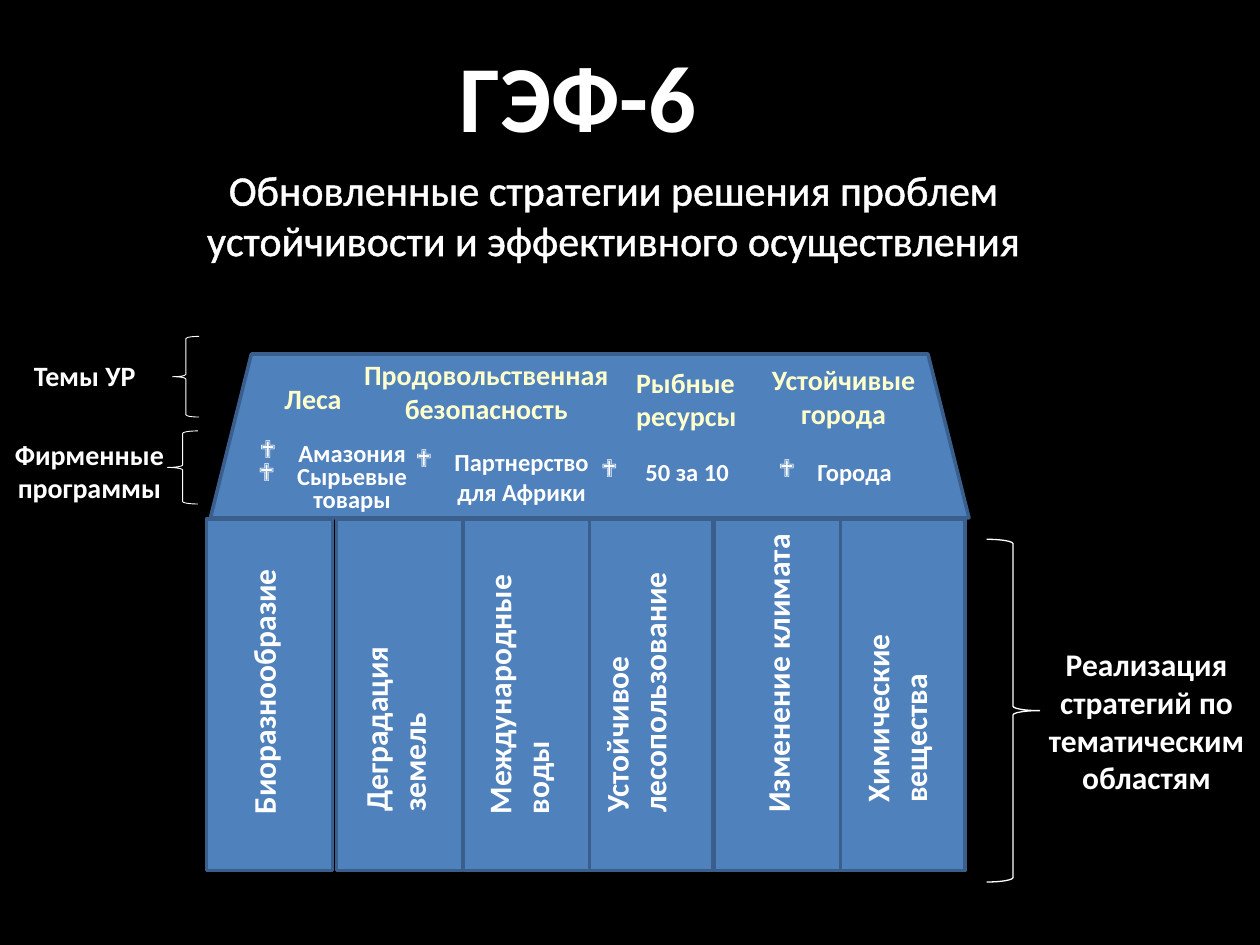
"""Build the slide on the GEF-6 strategy as a house of themes, programmes and focal areas."""
from copy import deepcopy

from lxml import etree
from pptx import Presentation
from pptx.dml.color import RGBColor
from pptx.enum.shapes import MSO_SHAPE
from pptx.enum.text import MSO_ANCHOR, MSO_AUTO_SIZE, PP_ALIGN
from pptx.oxml.ns import qn
from pptx.util import Inches, Pt

RECT, TRAPEZOID = MSO_SHAPE.RECTANGLE, MSO_SHAPE.TRAPEZOID
LEFT_BRACE, RIGHT_BRACE = MSO_SHAPE.LEFT_BRACE, MSO_SHAPE.RIGHT_BRACE
LEFT, CENTER = PP_ALIGN.LEFT, PP_ALIGN.CENTER
TOP, FIT_SHAPE = MSO_ANCHOR.TOP, MSO_AUTO_SIZE.SHAPE_TO_FIT_TEXT

THEME = {
    "font": "Calibri", "back": "000000", "fill": "4F81BD", "edge": "3A5F8C",
    "text": "FFFFFF", "theme": "FFFFCC",
    "title": 54, "subtitle": 24, "pillar": 18, "label": 16, "programme": 14,
}

TITLE = ("ГЭФ-6", (3.54, 0.25, 2.1, 1.01))
SUBTITLE = ("Обновленные стратегии решения проблем устойчивости и эффективного осуществления",
            (0.83, 1.25, 8.08, 0.91))
ROOF = (1.67, 2.81, 6.02, 1.3)
PILLAR_TOP, PILLAR_BOTTOM, PILLAR_WIDTH = 4.12, 6.91, 1
PILLARS = [
    (1.64, ["Биоразнообразие"], (1.89, 4.5, 0.5, 2.06)),
    (2.67, ["Деградация\nземель"], (2.78, 5.12, 0.81, 1.42)),
    (3.68, ["Международные\nводы"], (3.76, 4.55, 0.81, 2.01)),
    (4.66, ["Устойчивое\nлесопользование"], (4.69, 4.53, 0.81, 2.02)),
    (5.67, ["Изменение климата"], (5.97, 4.22, 0.5, 2.33)),
    (6.66, ["Химические", "вещества"], (6.76, 5.02, 0.81, 1.45)),
]
THEMES = [
    (["Леса"], (2.16, 2.98, 0.66, 0.37), LEFT),
    (["Продовольственная\nбезопасность"], (2.78, 2.79, 2.16, 0.64), CENTER),
    (["Рыбные", "ресурсы"], (4.95, 2.85, 1.01, 0.64), LEFT),
    (["Устойчивые\nгорода"], (6.02, 2.83, 1.35, 0.64), CENTER),
]
PROGRAMMES = [
    (["Амазония", "Сырьевые\nтовары"], (1.94, 3.43, 1.4, 0.71), CENTER),
    (["Партнерство\nдля Африки"], (3.19, 3.5, 1.59, 0.57), CENTER),
    ([" 50 за 10"], (4.67, 3.58, 1.23, 0.34), LEFT),
    (["Города"], (6.08, 3.58, 1.1, 0.34), LEFT),
]
SIDE_LABELS = [
    (["Темы УР"], (0.17, 2.8, 1.02, 0.37), LEFT, "label"),
    (["Фирменные\nпрограммы"], (0.01, 3.42, 1.4, 0.64), CENTER, "label"),
    (["Реализация\nстратегий по\nтематическим\nобластям"], (8.22, 5.07, 1.76, 1.31), CENTER, "pillar"),
]
BRACES = [
    (LEFT_BRACE, (1.37, 2.67, 0.21, 0.64), 0.5),
    (LEFT_BRACE, (1.33, 3.42, 0.24, 0.58), 0.5),
    (RIGHT_BRACE, (7.83, 4.28, 0.42, 2.72), 0.75),
]


def color(name):
    return RGBColor.from_string(THEME[name])


def add_block(s, kind, box, line, width, fill=None):
    sp = s.shapes.add_shape(kind, *map(Inches, box))
    sp.shadow.inherit = False
    if fill:
        sp.fill.solid()
        sp.fill.fore_color.rgb = color(fill)
    else:
        sp.fill.background()
    sp.line.color.rgb = color(line)
    sp.line.width = Pt(width)


def add_bullet(p):
    pPr = p._p.get_or_add_pPr()
    pPr.set("marL", str(Inches(0.31)))
    pPr.set("indent", str(Inches(-0.31)))
    etree.SubElement(pPr, qn("a:buFont"), typeface="Wingdings")
    etree.SubElement(pPr, qn("a:buChar"), char="❖")


def write(tf, paragraphs, size, ink="text", align=CENTER, bold=True, wrap=False, bullets=False):
    tf.word_wrap = wrap
    tf.auto_size = FIT_SHAPE
    tf.vertical_anchor = TOP
    for i, text in enumerate(paragraphs):
        p = tf.add_paragraph() if i else tf.paragraphs[0]
        p.alignment = align
        if bullets:
            add_bullet(p)
            if i:
                p.line_spacing = Pt(13)
        for j, part in enumerate(text.split("\n")):
            if j:
                p.add_line_break()
            r = p.add_run()
            r.text = part
            r.font.name = THEME["font"]
            r.font.size = Pt(THEME[size])
            r.font.bold = bold
            r.font.color.rgb = color(ink)
        for br in p._p.findall(qn("a:br")):
            br.append(deepcopy(r._r.get_or_add_rPr()))


def add_text(s, paragraphs, box, size, **style):
    tf = s.shapes.add_textbox(*map(Inches, box)).text_frame
    write(tf, paragraphs, size, **style)
    return tf


def outline(r, ink, width):
    ln = etree.Element(qn("a:ln"), w=str(Pt(width)))
    fill = etree.SubElement(ln, qn("a:solidFill"))
    etree.SubElement(fill, qn("a:srgbClr"), val=THEME[ink])
    r._r.get_or_add_rPr().insert(0, ln)


def main():
    prs = Presentation()
    prs.slide_width, prs.slide_height = Inches(10), Inches(7.5)
    s = prs.slides.add_slide(prs.slide_layouts[5])
    s.background.fill.solid()
    s.background.fill.fore_color.rgb = color("back")

    text, box = TITLE
    title = s.shapes.title
    title.left, title.top, title.width, title.height = map(Inches, box)
    write(title.text_frame, [text], "title")

    text, box = SUBTITLE
    tf = add_text(s, [text], box, "subtitle", bold=False, wrap=True)
    outline(tf.paragraphs[0].runs[0], "text", 1.45)

    add_block(s, TRAPEZOID, ROOF, "edge", 2, "fill")
    for left, _, _ in reversed(PILLARS):
        pillar = (left, PILLAR_TOP, PILLAR_WIDTH, PILLAR_BOTTOM - PILLAR_TOP)
        add_block(s, RECT, pillar, "edge", 2, "fill")
    for _, paragraphs, box in PILLARS:
        tf = add_text(s, paragraphs, box, "pillar", align=LEFT)
        tf._txBody.bodyPr.set("vert", "vert270")

    for paragraphs, box, align in THEMES:
        add_text(s, paragraphs, box, "label", ink="theme", align=align)
    for paragraphs, box, align in PROGRAMMES:
        add_text(s, paragraphs, box, "programme", align=align, bullets=True)
    for paragraphs, box, align, size in SIDE_LABELS:
        add_text(s, paragraphs, box, size, align=align)
    for kind, box, width in BRACES:
        add_block(s, kind, box, "text", width)

    prs.save("out.pptx")


if __name__ == "__main__":
    main()
